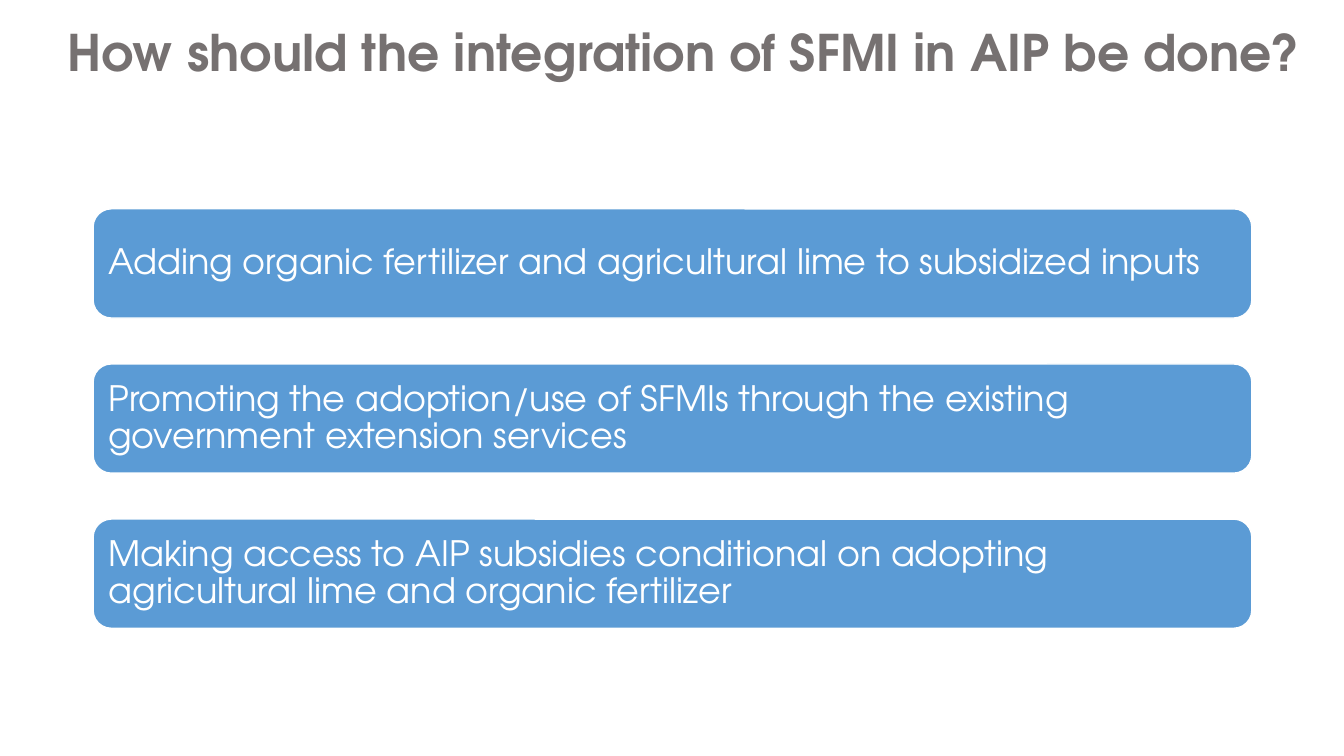
"""Build the slide on integrating SFMI in AIP."""
from pptx import Presentation
from pptx.dml.color import RGBColor
from pptx.enum import shapes, text
from pptx.util import Pt

FONT = "TeX Gyre Adventor"
COLORS = {"title": "767171", "bar": "5B9BD5", "white": "FFFFFF"}
BAR_LEFT, BAR_TOP, BAR_WIDTH, BAR_HEIGHT, BAR_STEP = 66.5, 149.2, 827.7, 78, 110.8
MEASURES = [
    "Adding organic fertilizer and agricultural lime to subsidized inputs",
    "Promoting the adoption/use of SFMIs through the existing government extension services",
    "Making access to AIP subsidies conditional on adopting agricultural lime and organic fertilizer",
]


def write_text(shape, wording, size, color, anchor, bold=False, spacing=1.0):
    frame = shape.text_frame
    frame.text = wording
    frame.word_wrap = True
    frame.auto_size = text.MSO_AUTO_SIZE.NONE
    frame.vertical_anchor = anchor
    paragraph = frame.paragraphs[0]
    paragraph.alignment = text.PP_ALIGN.LEFT
    paragraph.line_spacing = spacing
    paragraph.space_before = Pt(0)
    paragraph.font.name = FONT
    paragraph.font.size = Pt(size)
    paragraph.font.bold = bold
    paragraph.font.color.rgb = RGBColor.from_string(COLORS[color])


def place_title(slide, wording):
    title = slide.shapes.title
    title.left, title.top, title.width, title.height = Pt(41), Pt(11.5), Pt(906.5), Pt(51)
    write_text(title, wording, 36, "title", text.MSO_ANCHOR.TOP, bold=True)


def add_bar(slide, top, wording):
    bar = slide.shapes.add_shape(
        shapes.MSO_SHAPE.ROUNDED_RECTANGLE,
        Pt(BAR_LEFT), Pt(top), Pt(BAR_WIDTH), Pt(BAR_HEIGHT))
    bar.shadow.inherit = False
    bar.fill.solid()
    bar.fill.fore_color.rgb = RGBColor.from_string(COLORS["bar"])
    bar.line.color.rgb = RGBColor.from_string(COLORS["white"])
    bar.line.width = Pt(1)
    write_text(bar, wording, 25, "white", text.MSO_ANCHOR.MIDDLE, spacing=0.9)


def main():
    presentation = Presentation()
    presentation.slide_width, presentation.slide_height = Pt(960), Pt(540)
    slide = presentation.slides.add_slide(presentation.slide_layouts[5])
    place_title(slide, "How should the integration of SFMI in AIP be done?")
    for index, measure in enumerate(MEASURES):
        add_bar(slide, BAR_TOP + index * BAR_STEP, measure)
    presentation.save("out.pptx")


if __name__ == "__main__":
    main()
